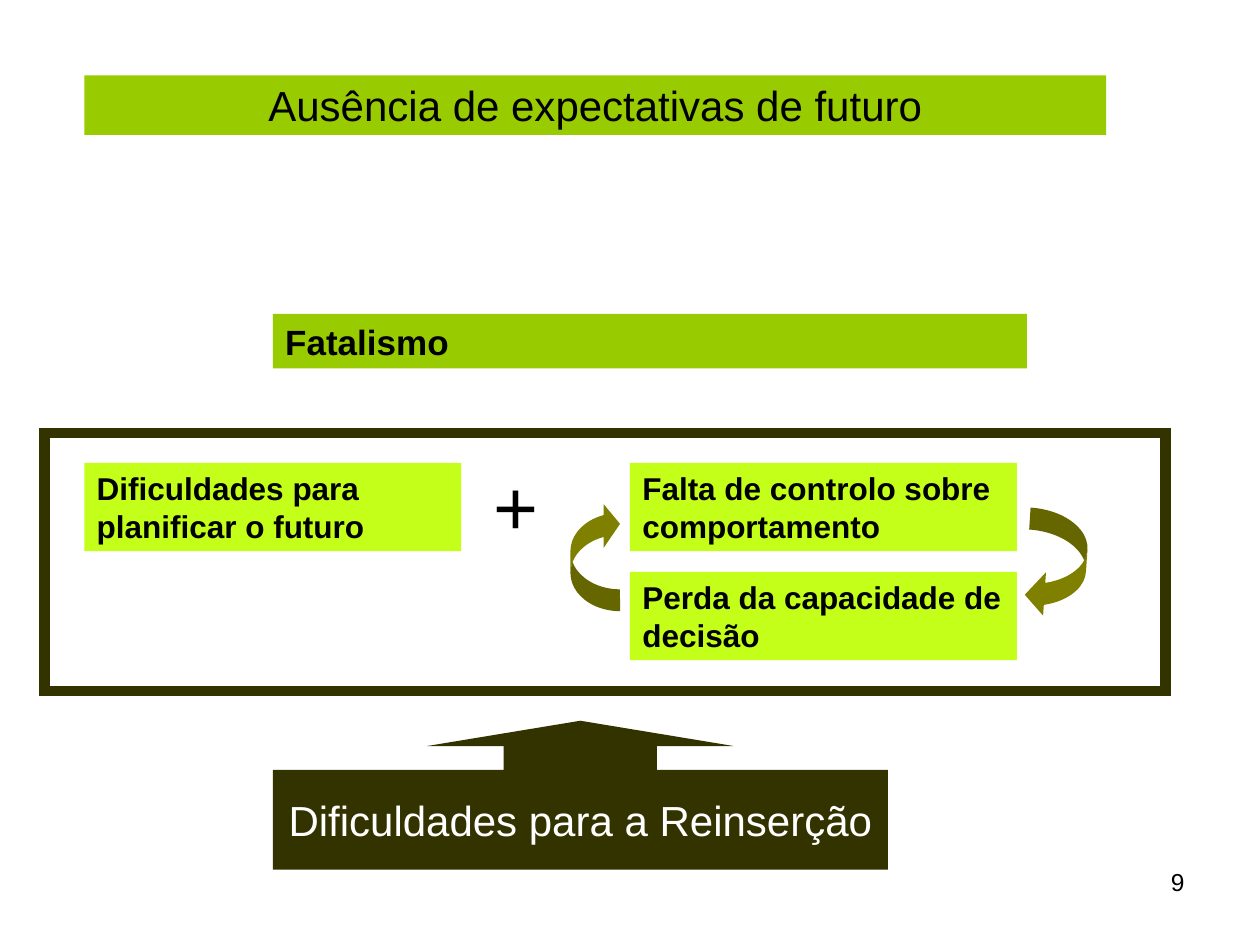
from lxml import etree
from pptx import Presentation
from pptx.dml.color import RGBColor
from pptx.enum.shapes import MSO_SHAPE
from pptx.enum.text import MSO_ANCHOR, MSO_AUTO_SIZE, PP_ALIGN
from pptx.oxml.ns import qn
from pptx.util import Cm, Pt

BLACK = RGBColor(0x00, 0x00, 0x00)
WHITE = RGBColor(0xFF, 0xFF, 0xFF)
GREEN = RGBColor(0x99, 0xCC, 0x00)
LIME = RGBColor(0xC3, 0xFF, 0x19)
OLIVE = RGBColor(0x80, 0x80, 0x00)
DARK = RGBColor(0x33, 0x33, 0x00)

RECT = MSO_SHAPE.RECTANGLE
CURVED_ARROW = MSO_SHAPE.CURVED_DOWN_ARROW
CALLOUT = MSO_SHAPE.UP_ARROW_CALLOUT
LEFT, CENTER, RIGHT = PP_ALIGN.LEFT, PP_ALIGN.CENTER, PP_ALIGN.RIGHT
TOP, MIDDLE = MSO_ANCHOR.TOP, MSO_ANCHOR.MIDDLE
GROW, FIXED = MSO_AUTO_SIZE.SHAPE_TO_FIT_TEXT, MSO_AUTO_SIZE.NONE

HEADING = {"size": Pt(24)}
SUBHEADING = {"size": Pt(20), "bold": True}
CAUSE = {"size": Pt(18), "bold": True}


def write(sp, text, font, color=BLACK, align=LEFT, anchor=TOP, wrap=True, fit=FIXED):
    tf = sp.text_frame
    frame = {"word_wrap": wrap, "auto_size": fit, "vertical_anchor": anchor}
    for name, value in frame.items():
        setattr(tf, name, value)
    p = tf.paragraphs[0]
    p.alignment = align
    r = p.add_run()
    r.text = text
    for name, value in {"name": "Arial", **font}.items():
        setattr(r.font, name, value)
    r.font.color.rgb = color


def add_shape(s, kind, box, fill=None, adjust=(), rotation=0):
    sp = s.shapes.add_shape(kind, *map(Cm, box))
    sp.shadow.inherit = False
    sp.rotation = rotation
    for i, value in enumerate(adjust):
        sp.adjustments[i] = value
    if fill is None:
        sp.fill.background()
    else:
        sp.fill.solid()
        sp.fill.fore_color.rgb = fill
    sp.line.fill.background()
    return sp


def add_frame(s, box):
    sp = add_shape(s, RECT, box)
    sp.line.color.rgb = DARK
    sp.line.width = Pt(6)
    ln = sp.line._get_or_add_ln()
    etree.SubElement(ln, qn("a:miter"), lim="800000")


def add_label(s, box, text, fill, font):
    write(add_shape(s, RECT, box, fill), text, font, fit=GROW)


def add_text(s, box, text, **style):
    write(s.shapes.add_textbox(*map(Cm, box)), text, **style)


def main():
    prs = Presentation()
    prs.slide_width, prs.slide_height = Cm(25.4), Cm(19.05)
    s = prs.slides.add_slide(prs.slide_layouts[6])

    # Title and subheading
    title = add_shape(s, RECT, (1.7, 1.52, 20.6, 1.2), GREEN)
    write(title, "Ausência de expectativas de futuro", HEADING,
          align=CENTER, anchor=MIDDLE, wrap=False)
    add_label(s, (5.5, 6.33, 15.2, 1.1), "Fatalismo", GREEN, SUBHEADING)

    # Framed causes
    add_frame(s, (0.9, 8.73, 22.6, 5.2))
    causes = [
        ((1.7, 9.33, 7.6, 1.78), "Dificuldades para planificar o futuro"),
        ((12.7, 9.33, 7.8, 1.78), "Falta de controlo sobre comportamento"),
        ((12.7, 11.53, 7.8, 1.78), "Perda da capacidade de decisão"),
    ]
    for box, text in causes:
        add_label(s, box, text, LIME, CAUSE)
    add_text(s, (9.7, 9.12, 1, 2.12), "+", font={"size": Pt(44)}, fit=GROW)

    # Cycle between the two causes on the right
    add_shape(s, CURVED_ARROW, (20.2, 10.77, 2.2, 1.2), OLIVE,
              (0.37, 0.73, 0.33), 93.8)
    add_shape(s, CURVED_ARROW, (10.9, 10.72, 2.2, 1), OLIVE,
              (0.44, 0.88, 0.33), 270)

    # Consequence
    result = add_shape(s, CALLOUT, (5.5, 14.53, 12.4, 3), DARK,
                       (1.03, 1.03, 0.17, 0.67))
    write(result, "Dificuldades para a Reinserção", HEADING, WHITE,
          CENTER, MIDDLE, wrap=False)

    # Slide number
    add_text(s, (18.2, 17.35, 5.93, 1.32), "9", font={"size": Pt(14)}, align=RIGHT)

    prs.save("out.pptx")


if __name__ == "__main__":
    main()
